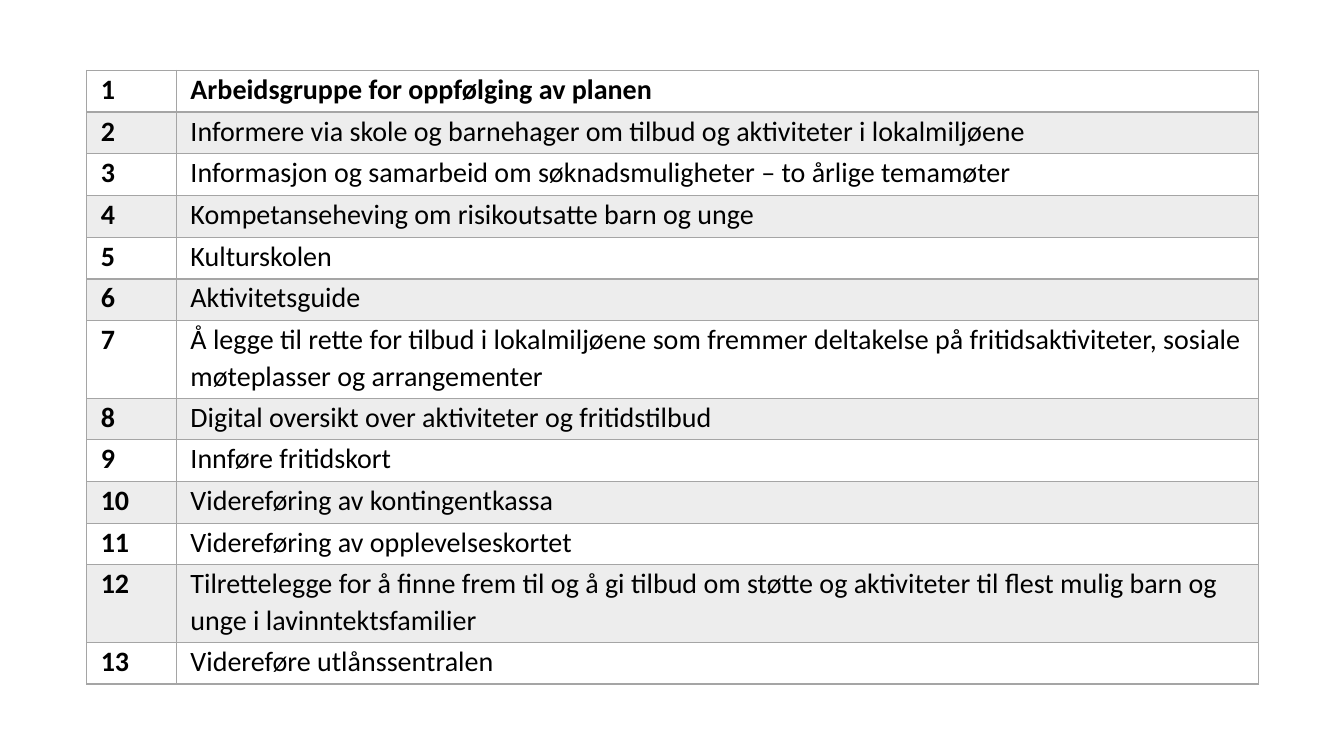
from dataclasses import dataclass

from lxml import etree
from pptx import Presentation, util as u
from pptx.dml.color import RGBColor
from pptx.oxml import ns

BLACK = RGBColor(0x00, 0x00, 0x00)
GREY = RGBColor(0xA5, 0xA5, 0xA5)
BAND_ALPHA = 20
TABLE_HEIGHT = 6.09
TALL_ROW = 0.77
COLUMN_WIDTHS = (0.89, 10.73)
CELL_FORMAT = {
    "margin_left": u.Inches(0.14),
    "margin_right": u.Inches(0.14),
    "margin_top": 0,
    "margin_bottom": 0,
}
FONT_FORMAT = {"name": "Calibri", "size": u.Pt(20)}


@dataclass(frozen=True)
class Measure:
    title: str
    two_lines: bool = False
    heading: bool = False


MEASURES = [
    Measure("Arbeidsgruppe for oppfølging av planen", heading=True),
    Measure("Informere via skole og barnehager om tilbud og aktiviteter i lokalmiljøene"),
    Measure("Informasjon og samarbeid om søknadsmuligheter – to årlige temamøter"),
    Measure("Kompetanseheving om risikoutsatte barn og unge"),
    Measure("Kulturskolen"),
    Measure("Aktivitetsguide"),
    Measure("Å legge til rette for tilbud i lokalmiljøene som fremmer deltakelse på "
            "fritidsaktiviteter, sosiale møteplasser og arrangementer", two_lines=True),
    Measure("Digital oversikt over aktiviteter og fritidstilbud"),
    Measure("Innføre fritidskort"),
    Measure("Videreføring av kontingentkassa"),
    Measure("Videreføring av opplevelseskortet"),
    Measure("Tilrettelegge for å finne frem til og å gi tilbud om støtte og aktiviteter "
            "til flest mulig barn og unge i lavinntektsfamilier", two_lines=True),
    Measure("Videreføre utlånssentralen"),
]


def set_borders(cell, top: float, bottom: float) -> None:
    tc_pr = cell._tc.get_or_add_tcPr()
    for side, width in {"L": 1, "R": 1, "T": top, "B": bottom}.items():
        ln = etree.SubElement(tc_pr, ns.qn(f"a:ln{side}"), w=str(u.Pt(width)))
        fill = etree.SubElement(ln, ns.qn("a:solidFill"))
        etree.SubElement(fill, ns.qn("a:srgbClr"), val=str(GREY))


def set_fill(cell, banded: bool) -> None:
    if not banded:
        cell.fill.background()
        return
    cell.fill.solid()
    cell.fill.fore_color.rgb = GREY
    color = cell._tc.tcPr.find(f"{ns.qn('a:solidFill')}/{ns.qn('a:srgbClr')}")
    etree.SubElement(color, ns.qn("a:alpha"), val=str(BAND_ALPHA * 1000))


def write_cell(cell, content: str, bold: bool) -> None:
    for name, value in CELL_FORMAT.items():
        setattr(cell, name, value)
    p = cell.text_frame.paragraphs[0]
    p.line_spacing = 1.07
    r = p.add_run()
    r.text = content
    for name, value in FONT_FORMAT.items():
        setattr(r.font, name, value)
    r.font.bold = bold
    r.font.color.rgb = BLACK


def add_measures(s) -> None:
    table = s.shapes.add_table(
        len(MEASURES), len(COLUMN_WIDTHS), u.Inches(0.86), u.Inches(0.7),
        u.Inches(sum(COLUMN_WIDTHS)), u.Inches(TABLE_HEIGHT)).table
    table.first_row = table.horz_banding = False
    for column, width in zip(table.columns, COLUMN_WIDTHS):
        column.width = u.Inches(width)
    tall = sum(m.two_lines for m in MEASURES)
    short_row = (TABLE_HEIGHT - tall * TALL_ROW) / (len(MEASURES) - tall)
    for i, measure in enumerate(MEASURES):
        table.rows[i].height = u.Inches(TALL_ROW if measure.two_lines else short_row)
        top = 2 if i and MEASURES[i - 1].heading else 1
        bottom = 2 if measure.heading else 1
        for j, content in enumerate((str(i + 1), measure.title)):
            cell = table.cell(i, j)
            set_borders(cell, top, bottom)
            set_fill(cell, i % 2 == 1)
            write_cell(cell, content, j == 0 or measure.heading)


def main() -> None:
    prs = Presentation()
    prs.slide_width, prs.slide_height = u.Inches(13.33), u.Inches(7.5)
    s = prs.slides.add_slide(prs.slide_layouts[6])
    add_measures(s)
    prs.save("out.pptx")


if __name__ == "__main__":
    main()
